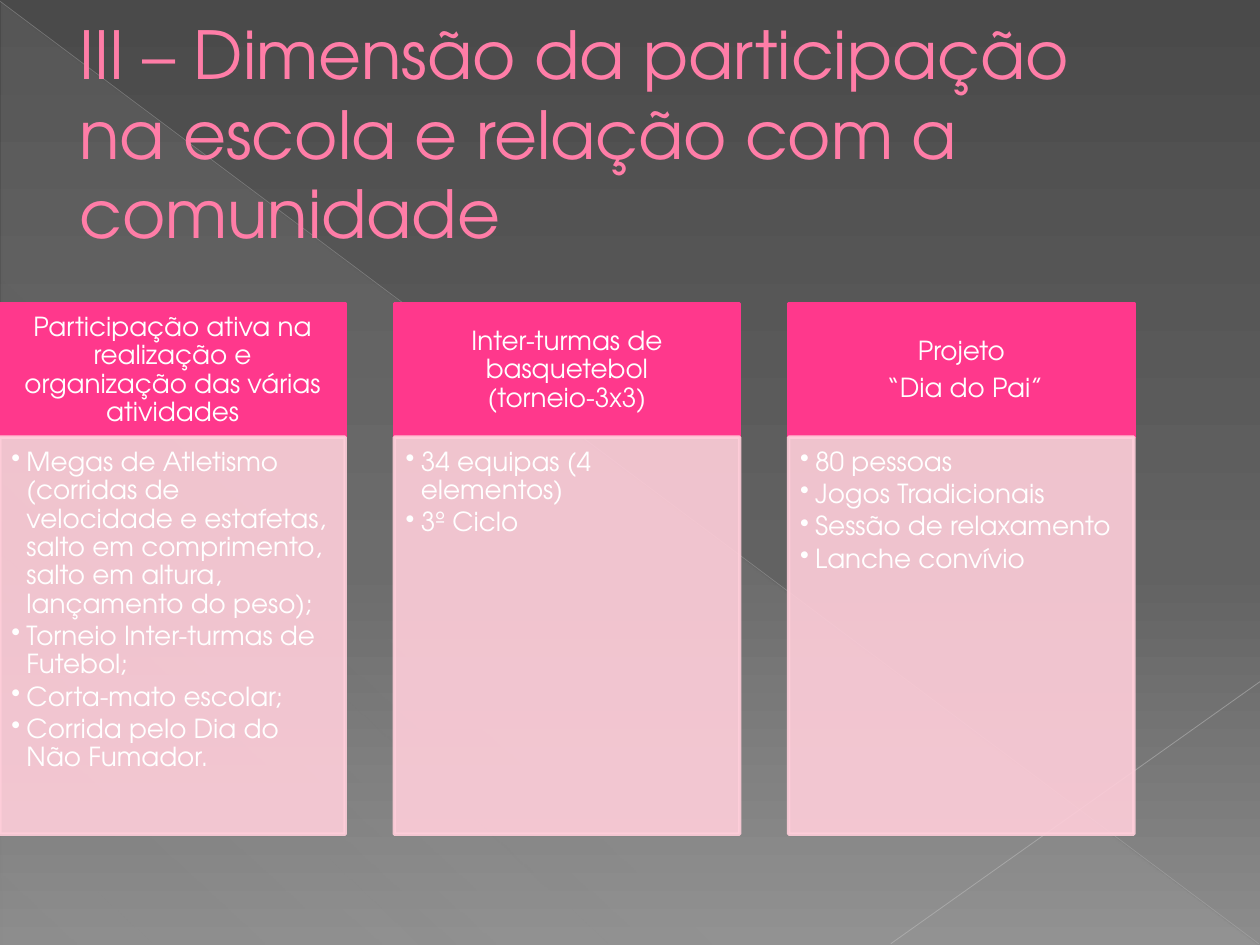
from lxml import etree
from pptx import Presentation
from pptx.dml.color import RGBColor
from pptx.enum.shapes import MSO_CONNECTOR, MSO_SHAPE
from pptx.enum.text import MSO_ANCHOR, MSO_AUTO_SIZE, PP_ALIGN
from pptx.oxml.ns import qn
from pptx.util import Inches, Pt

STRAIGHT = MSO_CONNECTOR.STRAIGHT
RECTANGLE, TRIANGLE = MSO_SHAPE.RECTANGLE, MSO_SHAPE.RIGHT_TRIANGLE
TOP, MIDDLE = MSO_ANCHOR.TOP, MSO_ANCHOR.MIDDLE
LEFT, CENTER = PP_ALIGN.LEFT, PP_ALIGN.CENTER
NO_AUTOFIT = MSO_AUTO_SIZE.NONE
TITLE_ONLY = 5

TITLE = "III – Dimensão da participação na escola e relação com a comunidade"
CARDS = [
    (["Participação ativa na realização e organização das várias atividades"],
     ["Megas de Atletismo (corridas de velocidade e estafetas, salto em "
      "comprimento, salto em altura, lançamento do peso);",
      "Torneio Inter-turmas de Futebol;",
      "Corta-mato escolar;",
      "Corrida pelo Dia do Não Fumador."]),
    (["Inter-turmas de basquetebol (torneio-3x3)"],
     ["34 equipas (4 elementos)", "3º Ciclo"]),
    (["Projeto", " “Dia do Pai”"],
     ["80 pessoas", "Jogos Tradicionais", "Sessão de relaxamento",
      "Lanche convívio"]),
]
CARD_TOP, CARD_WIDTH, CARD_STEP = 2.41, 2.74, 3.13
HEAD_HEIGHT, LIST_HEIGHT = 1.06, 3.15


def child(parent, tag, **attributes):
    return etree.SubElement(parent, qn(tag), attributes)


def paint(fill, color):
    fill.solid()
    fill.fore_color.rgb = RGBColor.from_string(color)


def fade(shape, holder, opacity):
    """Set the opacity, in percent, of the solid colour inside the holder tag."""
    solid = shape._element.find(f".//{qn(holder)}/{qn('a:solidFill')}")
    child(solid[0], "a:alpha", val=str(opacity * 1000))


def paint_gradient(fill, owner, stops, angle):
    """Give the fill gradient stops of (position, colour, opacity) in percent."""
    fill.gradient()
    gradient = owner.find(f".//{qn('a:gradFill')}")
    for part in list(gradient):
        gradient.remove(part)
    stop_list = child(gradient, "a:gsLst")
    for position, color, opacity in stops:
        stop = child(stop_list, "a:gs", pos=str(position * 1000))
        tint = child(stop, "a:srgbClr", val=color)
        child(tint, "a:alpha", val=str(opacity * 1000))
    child(gradient, "a:lin", ang=str(angle * 60000), scaled="0")


class SlideBuilder:
    font = "TeX Gyre Adventor"
    title_color, title_outline = "FF7DA7", "B12761"
    head_color, list_color, text_color = "FF388C", "FFCEDA", "FFFFFF"
    title_size, text_size = 37.8, 15

    def __init__(self, slide):
        self.slide = slide

    def background(self, stops, angle):
        paint_gradient(self.slide.background.fill, self.slide._element, stops, angle)

    def triangle(self, left, top, width, height, stops, angle):
        shape = self.slide.shapes.add_shape(
            TRIANGLE, Inches(left), Inches(top), Inches(width), Inches(height))
        shape.shadow.inherit = False
        shape.line.fill.background()
        paint_gradient(shape.fill, shape._element, stops, angle)

    def line(self, start, end, color, width, opacity):
        line = self.slide.shapes.add_connector(
            STRAIGHT, *(Inches(value) for value in start + end))
        paint(line.line.fill, color)
        line.line.width = Pt(width)
        fade(line, "a:ln", opacity)
        child(line._element.spPr, "a:effectLst")

    def span(self, para, text, size, color):
        span = para.add_run()
        span.text = text
        span.font.name = self.font
        span.font.size = Pt(size)
        paint(span.font.fill, color)
        return span

    def title(self, text, left, top, width, height):
        title = self.slide.shapes.title
        title.left, title.top = Inches(left), Inches(top)
        title.width, title.height = Inches(width), Inches(height)
        frame = title.text_frame
        frame.auto_size = NO_AUTOFIT
        frame.word_wrap = True
        frame.vertical_anchor = MIDDLE
        para = frame.paragraphs[0]
        para.alignment = LEFT
        para._p.get_or_add_pPr().set("marL", str(Inches(0.53)))
        span = self.span(para, text, self.title_size, self.title_color)
        outline = etree.Element(qn("a:ln"), w=str(Pt(0.5)))
        solid = child(outline, "a:solidFill")
        child(solid, "a:srgbClr", val=self.title_outline)
        span.font._element.insert(0, outline)
        # The title belongs in front of the background shapes.
        self.slide.shapes._spTree.append(title._element)

    def panel(self, left, top, height, color, lines, insets, anchor, align, after):
        """Add one filled rectangle with its paragraphs."""
        box = self.slide.shapes.add_shape(
            RECTANGLE, Inches(left), Inches(top), Inches(CARD_WIDTH), Inches(height))
        box.shadow.inherit = False
        paint(box.fill, color)
        paint(box.line.fill, color)
        box.line.width = Pt(2)
        frame = box.text_frame
        frame.word_wrap = True
        frame.vertical_anchor = anchor
        (frame.margin_left, frame.margin_top,
         frame.margin_right, frame.margin_bottom) = map(Inches, insets)
        for index, text in enumerate(lines):
            para = frame.add_paragraph() if index else frame.paragraphs[0]
            para.alignment = align
            para.line_spacing = 0.9
            para.space_after = Pt(after)
            self.span(para, text, self.text_size, self.text_color)
        return box

    def card(self, left, heading, items):
        self.panel(left, CARD_TOP, HEAD_HEIGHT, self.head_color, heading,
                   (0.12, 0.07, 0.12, 0.07), MIDDLE, CENTER, after=5.25)
        box = self.panel(left, CARD_TOP + HEAD_HEIGHT, LIST_HEIGHT, self.list_color,
                         items, (0.09, 0.09, 0.12, 0.13), TOP, LEFT, after=2.25)
        fade(box, "p:spPr", 90)
        fade(box, "a:ln", 90)
        for para in box.text_frame.paragraphs:
            properties = para._p.get_or_add_pPr()
            properties.set("marL", str(Inches(0.12)))
            properties.set("indent", str(-Inches(0.12)))
            child(properties, "a:buChar", char="•")


def main():
    deck = Presentation()
    deck.slide_width, deck.slide_height = Inches(10), Inches(7.5)
    page = SlideBuilder(deck.slides.add_slide(deck.slide_layouts[TITLE_ONLY]))

    page.background(
        [(0, "4A4A4A", 100), (60, "626262", 100), (100, "8C8C8C", 100)], 90)
    page.triangle(0.01, 0.02, 9.98, 7.48,
                  [(0, "D2D2D2", 10), (70, "D2D2D2", 8), (100, "D2D2D2", 1)], 133)
    page.line((0, 0.01), (9.99, 7.49), "BFBFBF", 0.39, 35)
    page.line((10, 5.41), (7.07, 7.49), "C6C6C6", 0.47, 45)
    page.title(TITLE, 0, 0.29, 9, 1.53)
    for column, (heading, items) in enumerate(CARDS):
        page.card(column * CARD_STEP, heading, items)

    deck.save("out.pptx")


if __name__ == "__main__":
    main()
